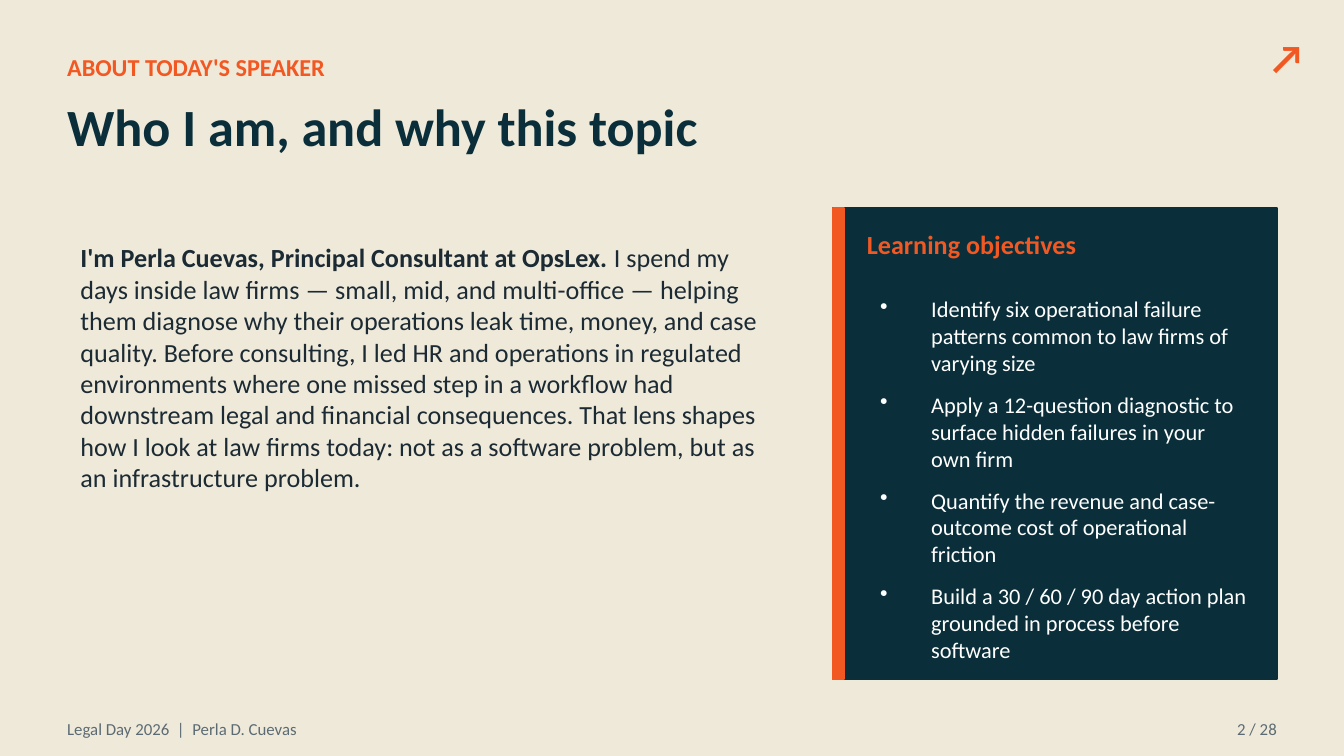
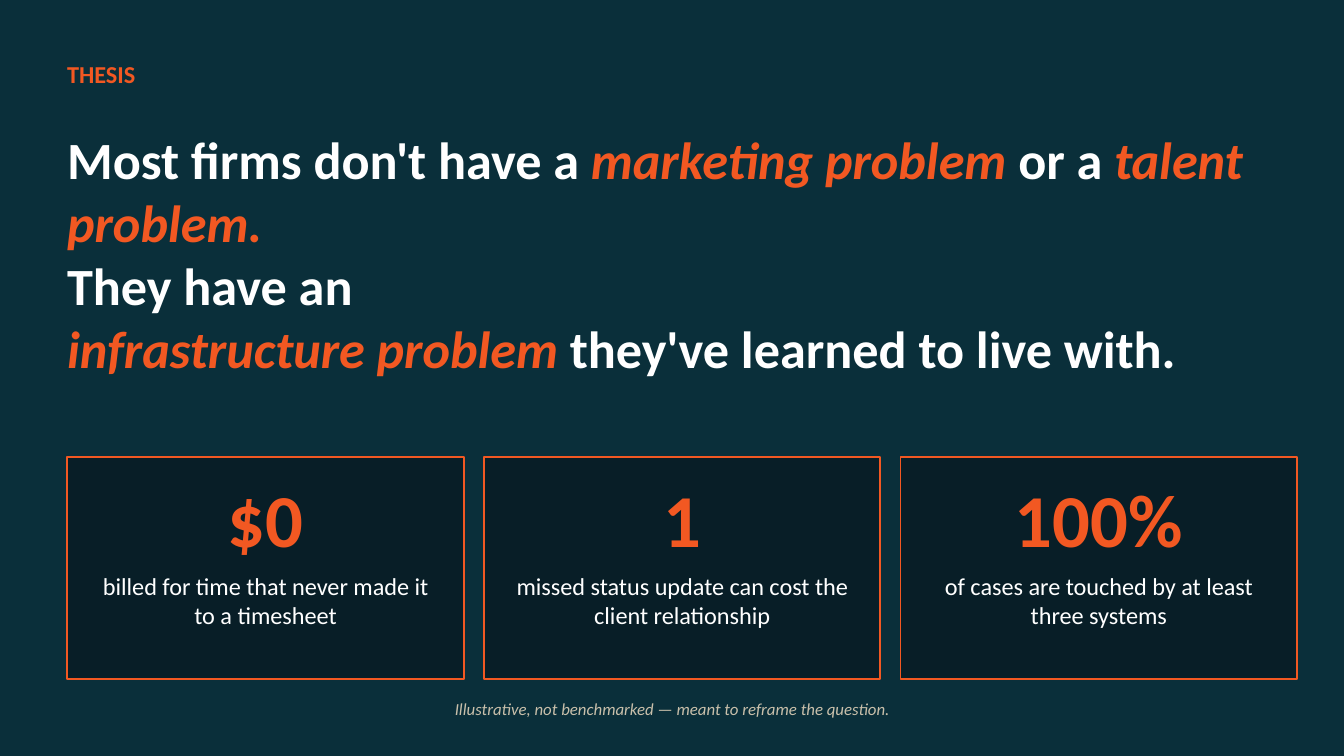
from lxml import etree
from pptx import Presentation
from pptx.dml.color import RGBColor
from pptx.enum.shapes import MSO_SHAPE
from pptx.enum.text import MSO_ANCHOR, PP_ALIGN
from pptx.oxml.ns import qn
from pptx.util import Inches, Pt

RECT = MSO_SHAPE.RECTANGLE
TOP, MIDDLE = MSO_ANCHOR.TOP, MSO_ANCHOR.MIDDLE
LEFT, CENTER, RIGHT = PP_ALIGN.LEFT, PP_ALIGN.CENTER, PP_ALIGN.RIGHT

FONT = "Calibri"
CREAM, NAVY, NIGHT, ORANGE = "EFE9DA", "0A2F3A", "081E27", "F25822"
INK, SLATE, SAND, WHITE = "1B2A33", "5C6B73", "C9C0AB", "FFFFFF"
EDGE = 0.5

KICKER = {"size": 13, "color": ORANGE, "bold": True}
TITLE = {"size": 28, "color": NAVY, "bold": True}
THESIS = {**TITLE, "color": WHITE}
STRESS = {**TITLE, "color": ORANGE, "italic": True}
HEAD = {"size": 14, "color": ORANGE, "bold": True}
BODY = {"size": 14, "color": INK}
LEAD = {**BODY, "bold": True}
ITEM = {"size": 12, "color": WHITE}
FIGURE = {"size": 40, "color": ORANGE, "bold": True}
LABEL = {"size": 13, "color": WHITE}
FOOT = {"size": 9, "color": SLATE}
NOTE = {"size": 9, "color": SAND, "italic": True}

BIO = [
    ("I'm Perla Cuevas, Principal Consultant at OpsLex. ", LEAD),
    ("I spend my days inside law firms — small, mid, and multi-office — "
     "helping them diagnose why their operations leak time, money, and case "
     "quality. Before consulting, I led HR and operations in regulated "
     "environments where one missed step in a workflow had downstream legal "
     "and financial consequences. That lens shapes how I look at law firms "
     "today: not as a software problem, but as an infrastructure problem.",
     BODY),
]
GOALS = [
    "Identify six operational failure patterns common to law firms of varying size",
    "Apply a 12-question diagnostic to surface hidden failures in your own firm",
    "Quantify the revenue and case-outcome cost of operational friction",
    "Build a 30 / 60 / 90 day action plan grounded in process before software",
]
CLAIM = [
    [("Most firms don't have a ", THESIS), ("marketing problem ", STRESS),
     ("or a ", THESIS), ("talent problem.", STRESS)],
    [("They have an", THESIS)],
    [("infrastructure problem ", STRESS),
     ("they've learned to live with.", THESIS)],
]
STATS = [
    ("$0", "billed for time that never made it to a timesheet"),
    ("1", "missed status update can cost the client relationship"),
    ("100%", "of cases are touched by at least three systems"),
]


def rgb(code):
    return RGBColor.from_string(code)


def add_slide(deck, back):
    slide = deck.slides.add_slide(deck.slide_layouts[6])
    fill = slide.background.fill
    fill.solid()
    fill.fore_color.rgb = rgb(back)
    return slide


def add_box(slide, box, fill, line):
    shape = slide.shapes.add_shape(RECT, *map(Inches, box))
    shape.shadow.inherit = False
    shape.fill.solid()
    shape.fill.fore_color.rgb = rgb(fill)
    shape.line.color.rgb = rgb(line)
    shape.line.width = Pt(1)


def style_run(run, style):
    values = {"name": FONT, **style}
    values["size"] = Pt(values["size"])
    run.font.color.rgb = rgb(values.pop("color"))
    for key, value in values.items():
        setattr(run.font, key, value)


def add_text(slide, box, paras, align=LEFT, anchor=TOP, pad=(0, 0)):
    """Add a text box; each paragraph is a list of (text, style) runs."""
    frame = slide.shapes.add_textbox(*map(Inches, box)).text_frame
    side, edge = map(Inches, pad)
    layout = {"word_wrap": True, "vertical_anchor": anchor,
              "margin_left": side, "margin_right": side,
              "margin_top": edge, "margin_bottom": edge}
    for key, value in layout.items():
        setattr(frame, key, value)
    for i, runs in enumerate(paras):
        para = frame.add_paragraph() if i else frame.paragraphs[0]
        para.alignment = align
        for text, style in runs:
            run = para.add_run()
            run.text = text
            style_run(run, style)
    return frame


def add_line(slide, box, text, style, align=LEFT, anchor=MIDDLE):
    add_text(slide, box, [[(text, style)]], align, anchor)


def add_list(slide, box, items):
    frame = add_text(slide, box, [[(item, ITEM)] for item in items],
                     pad=(0.1, 0.05))
    for i, para in enumerate(frame.paragraphs):
        if i:
            para.space_before = Pt(8)
        props = para._p.get_or_add_pPr()
        props.set("marL", str(Inches(0.38)))
        props.set("indent", str(-Inches(0.38)))
        tint = etree.SubElement(props, qn("a:buClr"))
        etree.SubElement(tint, qn("a:srgbClr"), val=WHITE)
        etree.SubElement(props, qn("a:buChar"), char="•")


def add_foot(slide, page):
    add_line(slide, (EDGE, 5.3, 6, 0.25),
             "Legal Day 2026  |  Perla D. Cuevas", FOOT)
    add_line(slide, (8.6, 5.3, 0.9, 0.25), page, FOOT, RIGHT)


def add_panel(slide, left, top, head, items):
    add_box(slide, (left, top, 3.3, 3.5), NAVY, NAVY)
    add_box(slide, (left, top, 0.08, 3.5), ORANGE, ORANGE)
    inner = left + 0.25
    add_line(slide, (inner, top + 0.15, 3, 0.4), head, HEAD, anchor=TOP)
    add_list(slide, (inner, top + 0.6, 2.95, 2.85), items)


def add_stat(slide, left, figure, label):
    top, width = 3.4, 2.95
    add_box(slide, (left, top, width, 1.65), NIGHT, ORANGE)
    add_line(slide, (left, top + 0.1, width, 0.7), figure, FIGURE, CENTER)
    add_line(slide, (left + 0.2, top + 0.85, width - 0.4, 0.7),
             label, LABEL, CENTER, TOP)


def build_speaker(deck):
    slide = add_slide(deck, CREAM)
    add_line(slide, (9.3, 0.15, 0.55, 0.55), "↗", {**HEAD, "size": 22}, CENTER)
    add_line(slide, (EDGE, 0.35, 6, 0.3), "ABOUT TODAY'S SPEAKER", KICKER)
    add_line(slide, (EDGE, 0.7, 9, 0.9), "Who I am, and why this topic",
             TITLE, anchor=TOP)
    add_text(slide, (EDGE, 1.75, 5.4, 3), [BIO], pad=(0.1, 0.05))
    add_panel(slide, 6.2, 1.55, "Learning objectives", GOALS)
    add_foot(slide, "2 / 28")


def build_thesis(deck):
    slide = add_slide(deck, NAVY)
    add_line(slide, (EDGE, 0.4, 3, 0.3), "THESIS", KICKER)
    add_text(slide, (EDGE, 0.95, 9, 2), CLAIM)
    for i, (figure, label) in enumerate(STATS):
        add_stat(slide, EDGE + 3.1 * i, figure, label)
    add_line(slide, (EDGE, 5.15, 9, 0.25),
             "Illustrative, not benchmarked — meant to reframe the question.",
             NOTE, CENTER)


def main():
    deck = Presentation()
    deck.slide_width = Inches(10)
    deck.slide_height = Inches(10 * 9 / 16)
    build_speaker(deck)
    build_thesis(deck)
    deck.save("out.pptx")


if __name__ == "__main__":
    main()
